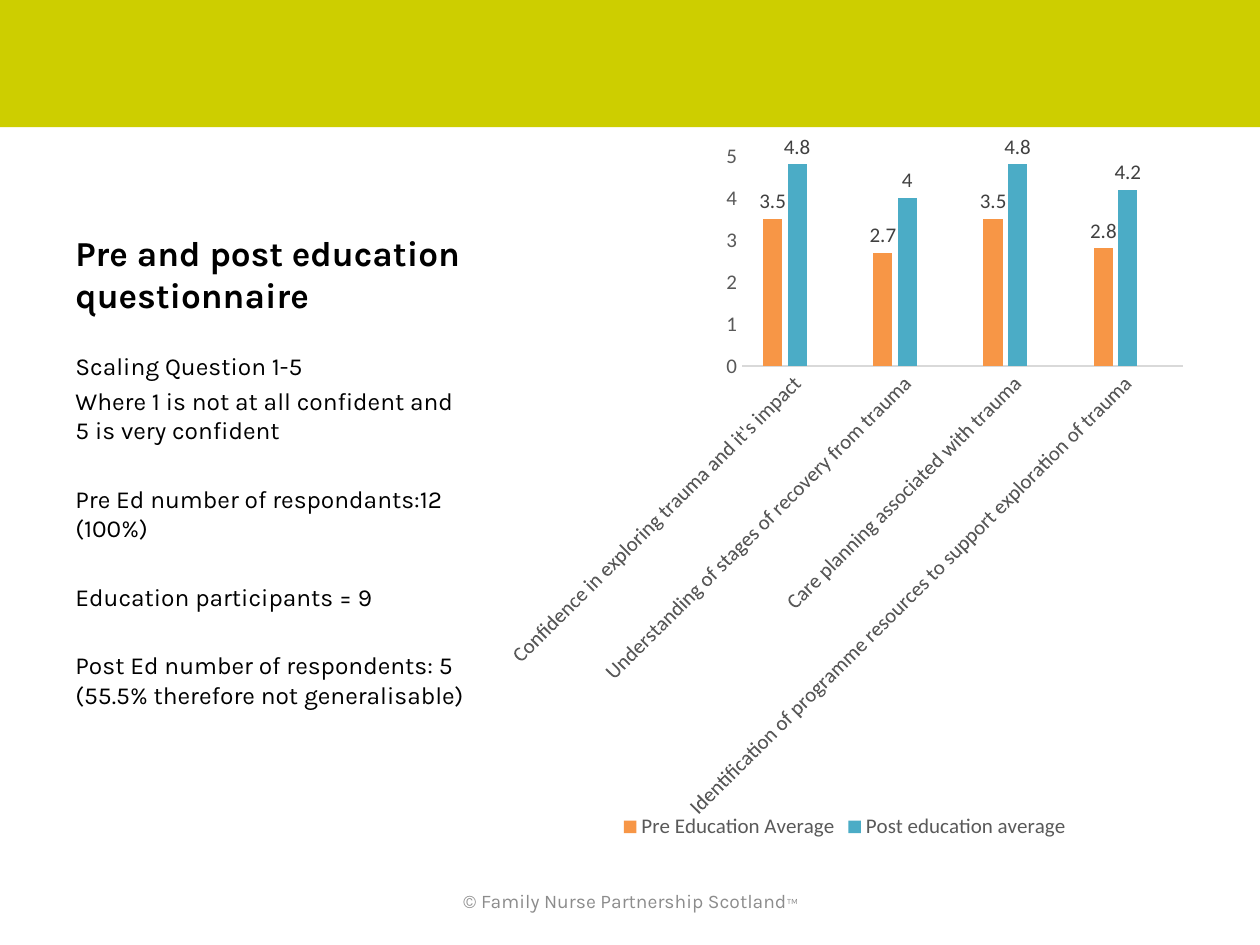
"""Build the pre and post education questionnaire slide."""
from lxml import etree
from pptx import Presentation
from pptx import util as u
from pptx.chart.data import CategoryChartData
from pptx.dml.color import RGBColor
from pptx.enum import chart as charts, shapes, text
from pptx.oxml import ns

COLOURS = {
    "band": "CDCE00", "ink": "000000", "footer": "8C8C8C",
    "axis_text": "595959", "axis_line": "D9D9D9", "label": "404040",
    "pre": "F79646", "post": "4BACC6", "spare": "8064A2",
}


class SlideBuilder:
    """Hold the style and the current slide."""

    def __init__(self, page):
        self.page = page
        self.text_font = "Karla"
        self.chart_font = "Calibri"

    def style(self, font, name, size, colour, bold=False):
        font.name, font.size, font.bold = name, u.Pt(size), bold
        font.color.rgb = RGBColor.from_string(COLOURS[colour])

    def fill(self, target, colour):
        target.fill.solid()
        target.fill.fore_color.rgb = RGBColor.from_string(COLOURS[colour])

    def band(self, *place):
        box = self.page.shapes.add_shape(
            shapes.MSO_SHAPE.RECTANGLE, *map(u.Inches, place))
        box.shadow.inherit = False
        self.fill(box, "band")
        box.line.fill.background()

    def text_box(self, place, lines, size, colour="ink", bold=False,
                 anchor=text.MSO_ANCHOR.TOP, align=text.PP_ALIGN.LEFT, gaps=()):
        box = self.page.shapes.add_textbox(*map(u.Inches, place))
        frame = box.text_frame
        frame.word_wrap = True
        frame.vertical_anchor = anchor
        frame.text = "\n".join(lines)
        for para, gap in zip(frame.paragraphs, gaps):
            para.space_before = u.Pt(gap)
        for para in frame.paragraphs:
            para.alignment = align
            for span in para.runs:
                self.style(span.font, self.text_font, size, colour, bold)
        return frame

    def superscript(self, para, mark, size, colour):
        span = para.add_run()
        span.text = mark
        self.style(span.font, self.text_font, size, colour)
        span.font._element.set("baseline", "30000")

    def column_chart(self, place, categories, series, top):
        data = CategoryChartData()
        data.categories = categories
        for name, values, _ in series:
            data.add_series(name, values)
        chart = self.page.shapes.add_chart(
            charts.XL_CHART_TYPE.COLUMN_CLUSTERED,
            *map(u.Inches, place), data).chart
        chart.has_title = False
        self.style(chart.font, self.chart_font, 10, "ink")
        plot = chart.plots[0]
        plot.vary_by_categories = False
        plot.gap_width, plot.overlap = 219, -27
        for column, (_, _, colour) in zip(plot.series, series):
            self.fill(column.format, colour)
            labels = column.data_labels
            labels.show_value = True
            labels.position = charts.XL_LABEL_POSITION.OUTSIDE_END
            self.style(labels.font, self.chart_font, 12, "label")
        self.axes(chart, top)
        self.legend(chart, hidden=len(series) - 1)

    def axes(self, chart, top):
        for axis in (chart.category_axis, chart.value_axis):
            axis.has_major_gridlines = False
            axis.major_tick_mark = charts.XL_TICK_MARK.NONE
            axis.minor_tick_mark = charts.XL_TICK_MARK.NONE
            self.style(axis.tick_labels.font, self.chart_font, 12, "axis_text")
        line = chart.category_axis.format.line
        line.color.rgb = RGBColor.from_string(COLOURS["axis_line"])
        line.width = u.Pt(0.75)
        body = chart.category_axis._element.find(".//" + ns.qn("a:bodyPr"))
        body.set("rot", "-2700000")
        body.set("vert", "horz")
        chart.value_axis.format.line.fill.background()
        chart.value_axis.minimum_scale = 0
        chart.value_axis.maximum_scale = top
        chart.value_axis.major_unit = 1

    def legend(self, chart, hidden):
        chart.has_legend = True
        legend = chart.legend
        legend.position = charts.XL_LEGEND_POSITION.BOTTOM
        legend.include_in_layout = False
        self.style(legend.font, self.chart_font, 12, "axis_text")
        entry = etree.Element(ns.qn("c:legendEntry"))
        etree.SubElement(entry, ns.qn("c:idx")).set("val", str(hidden))
        etree.SubElement(entry, ns.qn("c:delete")).set("val", "1")
        legend._element.find(ns.qn("c:legendPos")).addnext(entry)


def main():
    deck = Presentation()
    deck.slide_width, deck.slide_height = u.Inches(10), u.Inches(7.5)
    builder = SlideBuilder(deck.slides.add_slide(deck.slide_layouts[6]))
    builder.band(0, 0, 10, 1.01)
    builder.text_box((0.5, 1.28, 3.29, 1.27),
                     ["Pre and post education questionnaire"], 20, bold=True,
                     anchor=text.MSO_ANCHOR.BOTTOM)
    builder.text_box(
        (0.5, 2.74, 3.29, 3.96),
        ["Scaling Question 1-5",
         "Where 1 is not at all confident and 5 is very confident",
         "Pre Ed number of respondants:12 (100%)",
         "Education participants = 9",
         "Post Ed number of respondents: 5 (55.5% therefore not generalisable)"],
        14, gaps=(0, 2.8, 22.4, 22.4, 22.4))
    footer = builder.text_box(
        (3.42, 6.95, 3.17, 0.4), ["© Family Nurse Partnership Scotland"], 11,
        "footer", anchor=text.MSO_ANCHOR.MIDDLE, align=text.PP_ALIGN.CENTER)
    builder.superscript(footer.paragraphs[0], "TM", 8, "footer")
    builder.column_chart(
        (3.91, 1.07, 5.59, 5.63),
        ["Confidence in exploring trauma and it's impact",
         "Understanding of stages of recovery from trauma",
         "Care planning associated with trauma",
         "Identification of programme resources to support exploration of trauma"],
        [("Pre Education Average", (3.5, 2.7, 3.5, 2.8), "pre"),
         ("Post education average", (4.8, 4, 4.8, 4.2), "post"),
         ("Series 3", (None,) * 4, "spare")],
        top=5)
    deck.save("out.pptx")


if __name__ == "__main__":
    main()
